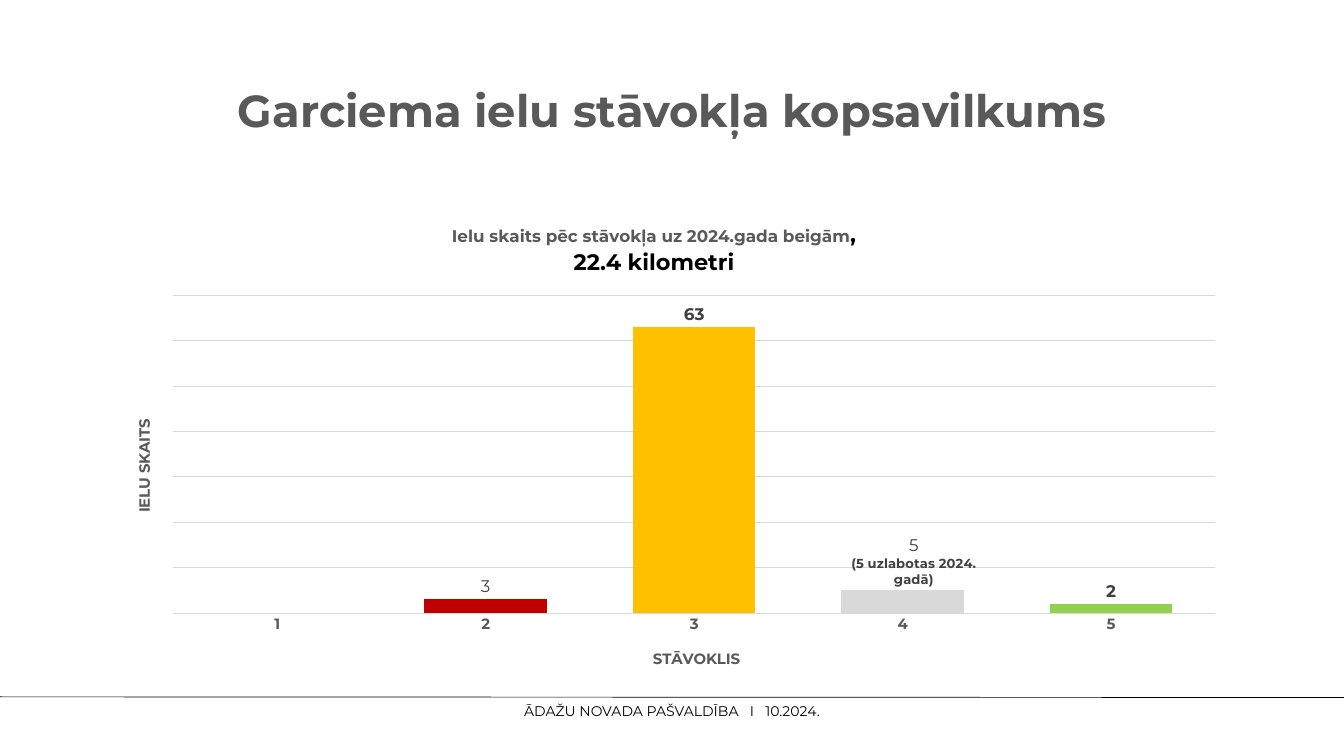
from dataclasses import dataclass

import pptx
import pptx.chart.data
import pptx.dml.color
import pptx.enum.chart
import pptx.enum.shapes
import pptx.enum.text
import pptx.oxml
import pptx.oxml.ns
import pptx.util

Inches = pptx.util.Inches
Pt = pptx.util.Pt
CENTER = pptx.enum.text.PP_ALIGN.CENTER
CHART_NAMESPACE = pptx.oxml.ns.nsdecls("c")
LABEL_NAMESPACE = "http://schemas.microsoft.com/office/drawing/2012/chart"


@dataclass(frozen=True)
class Theme:
    font: str = "Montserrat"
    black: str = "000000"
    heading: str = "595959"
    label: str = "404040"
    grid: str = "D9D9D9"
    series: str = "4472C4"
    bars: tuple = (None, "C00000", "FFC000", "D9D9D9", "92D050")
    title_size: int = 48
    subtitle_size: int = 24
    label_size: int = 18
    axis_size: int = 16
    footer_size: int = 15
    note_size: int = 14


def color(value):
    return pptx.dml.color.RGBColor.from_string(value)


def manual_layout(inner=False, **fractions):
    target = '<c:layoutTarget val="inner"/>' if inner else ""
    modes = '<c:xMode val="edge"/><c:yMode val="edge"/>'
    values = "".join(f'<c:{key} val="{value}"/>' for key, value in fractions.items())
    return pptx.oxml.parse_xml(
        f"<c:layout {CHART_NAMESPACE}><c:manualLayout>{target}{modes}{values}"
        "</c:manualLayout></c:layout>"
    )


class SlideBuilder:
    def __init__(self, slide, theme):
        self.slide = slide
        self.theme = theme

    def format_font(self, font, size, fill, bold=False):
        values = {"name": self.theme.font, "size": Pt(size), "bold": bold}
        for name, value in values.items():
            setattr(font, name, value)
        font.color.rgb = color(fill)

    def add_text(self, frame, paragraphs):
        for index, runs in enumerate(paragraphs):
            paragraph = frame.paragraphs[0] if index == 0 else frame.add_paragraph()
            paragraph.alignment = CENTER
            for text, size, fill, bold in runs:
                run = paragraph.add_run()
                run.text = text
                self.format_font(run.font, size, fill, bold)

    def title(self, text, left, top, width, height):
        shape = self.slide.shapes.title
        box = {"left": left, "top": top, "width": width, "height": height}
        for name, value in box.items():
            setattr(shape, name, Inches(value))
        frame = shape.text_frame
        frame.vertical_anchor = pptx.enum.text.MSO_ANCHOR.MIDDLE
        self.add_text(frame, [[(text, self.theme.title_size, self.theme.heading, True)]])
        frame.paragraphs[0].line_spacing = 0.9

    def rule(self, start, end):
        line = self.slide.shapes.add_connector(
            pptx.enum.shapes.MSO_CONNECTOR.STRAIGHT, *map(Inches, start + end)
        )
        line.line.color.rgb = color(self.theme.black)
        line.line.width = Pt(0.75)
        line._element.spPr.append(
            pptx.oxml.parse_xml(f"<a:effectLst {pptx.oxml.ns.nsdecls('a')}/>")
        )

    def footer(self, words, gap, left, top, width, height):
        box = self.slide.shapes.add_textbox(*map(Inches, (left, top, width, height)))
        frame = box.text_frame
        frame.word_wrap = True
        for side in ("left", "top", "right", "bottom"):
            setattr(frame, f"margin_{side}", 0)
        style = (self.theme.footer_size, self.theme.black, False)
        runs = [(words[0], *style)]
        for word in words[1:]:
            runs += [(" ", *style), (word, *style)]
        self.add_text(frame, [runs])
        paragraph = frame.paragraphs[0]
        paragraph.line_spacing = Pt(18)
        for run in paragraph.runs[1::2]:
            run.font._element.set("spc", str(gap * 100))

    def chart_heading(self, heading, paragraphs, x, y, rotation=0):
        self.add_text(heading.text_frame, paragraphs)
        element = heading._element
        element.xpath(".//a:bodyPr")[0].set("rot", str(rotation * 60000))
        for layout in element.xpath("c:layout"):
            element.remove(layout)
        element.xpath("c:tx")[0].addnext(manual_layout(x=x, y=y))

    def axis_heading(self, axis, text, x, y, rotation=0):
        axis.has_title = True
        runs = [(text, self.theme.axis_size, self.theme.heading, True)]
        self.chart_heading(axis.axis_title, [runs], x, y, rotation)

    def column_chart(self, categories, values, left, top, width, height):
        data = pptx.chart.data.CategoryChartData()
        data.categories = categories
        data.add_series("Series 1", values)
        chart = self.slide.shapes.add_chart(
            pptx.enum.chart.XL_CHART_TYPE.COLUMN_CLUSTERED,
            *map(Inches, (left, top, width, height)),
            data,
        ).chart
        chart.has_legend = False
        self.format_font(chart.font, 10, self.theme.black)
        plot = chart.plots[0]
        plot.gap_width = 70
        plot.vary_by_categories = False
        series = plot.series[0]
        series.format.fill.solid()
        series.format.fill.fore_color.rgb = color(self.theme.series)
        for index, fill in enumerate(self.theme.bars):
            if fill:
                point_fill = series.points[index].format.fill
                point_fill.solid()
                point_fill.fore_color.rgb = color(fill)
        labels = series.data_labels
        labels.show_value = True
        labels.position = pptx.enum.chart.XL_LABEL_POSITION.OUTSIDE_END
        self.format_font(labels.font, self.theme.label_size, self.theme.label, True)
        self.style_axes(chart)
        area = chart._chartSpace.chart.plotArea
        for layout in area.xpath("c:layout"):
            area.remove(layout)
        area.insert(0, manual_layout(True, x=0.054, y=0.178, w=0.926, h=0.678))
        return chart

    def style_axes(self, chart):
        tick_none = pptx.enum.chart.XL_TICK_MARK.NONE
        for axis in (chart.category_axis, chart.value_axis):
            axis.major_tick_mark = tick_none
            axis.minor_tick_mark = tick_none
            axis.format.line.fill.background()
        self.format_font(
            chart.category_axis.tick_labels.font,
            self.theme.axis_size, self.theme.heading, True,
        )
        scale = {"minimum_scale": 0, "maximum_scale": 70, "major_unit": 10,
                 "has_major_gridlines": True, "visible": False}
        for name, value in scale.items():
            setattr(chart.value_axis, name, value)
        grid = chart.value_axis.major_gridlines.format.line
        grid.color.rgb = color(self.theme.grid)
        grid.width = Pt(0.75)

    def point_label(self, chart, index, paragraphs):
        label = chart.plots[0].series[0].points[index].data_label
        self.add_text(label.text_frame, paragraphs)
        label.position = pptx.enum.chart.XL_LABEL_POSITION.OUTSIDE_END
        return label._get_or_add_dLbl()

    def size_label(self, element, shift, width, height):
        element.xpath("c:idx")[0].addnext(pptx.oxml.parse_xml(
            f'<c:layout {CHART_NAMESPACE}><c:manualLayout><c:x val="{shift}"/>'
            '<c:y val="0"/></c:manualLayout></c:layout>'
        ))
        element.append(pptx.oxml.parse_xml(
            f'<c:extLst {CHART_NAMESPACE}><c:ext xmlns:c15="{LABEL_NAMESPACE}" '
            'uri="{CE6537A1-D6FC-4f65-9D91-7224C49458BB}"><c15:layout><c:manualLayout>'
            f'<c:w val="{width}"/><c:h val="{height}"/>'
            "</c:manualLayout></c15:layout></c:ext></c:extLst>"
        ))


def main():
    theme = Theme()
    presentation = pptx.Presentation()
    presentation.slide_width = Inches(20)
    presentation.slide_height = Inches(11.25)
    slide = presentation.slides.add_slide(presentation.slide_layouts[5])
    builder = SlideBuilder(slide, theme)
    builder.title("Garciema ielu stāvokļa kopsavilkums", 1.38, 0.6, 17.25, 2.17)

    chart = builder.column_chart(
        ["1", "2", "3", "4", "5"], [None, 3, 63, 5, 2], 1.67, 3.15, 16.75, 6.98
    )
    chart.has_title = True
    subtitle = (theme.subtitle_size, theme.black, True)
    builder.chart_heading(chart.chart_title, [
        [("Ielu skaits pēc stāvokļa uz 2024.gada beigām",
          theme.label_size, theme.heading, True), (",", *subtitle)],
        [("22.4 kilometri", *subtitle)],
    ], 0.3, 0.013)
    builder.axis_heading(chart.category_axis, "STĀVOKLIS", 0.478, 0.926)
    builder.axis_heading(chart.value_axis, "IELU SKAITS", 0.017, 0.436, -90)
    plain = (theme.label_size, theme.label, False)
    builder.point_label(chart, 1, [[("3", *plain)]])
    improved = builder.point_label(chart, 3, [
        [("5", *plain)],
        [("(5 uzlabotas 2024. gadā)", theme.note_size, theme.label, True)],
    ])
    builder.size_label(improved, 0.01, 0.12, 0.12)

    builder.rule((-0.01, 10.37), (20.01, 10.38))
    builder.footer(["ĀDAŽU NOVADA PAŠVALDĪBA", "I", "10.2024."], 8, 0.1, 10.46, 19.8, 0.25)
    presentation.save("out.pptx")


if __name__ == "__main__":
    main()
